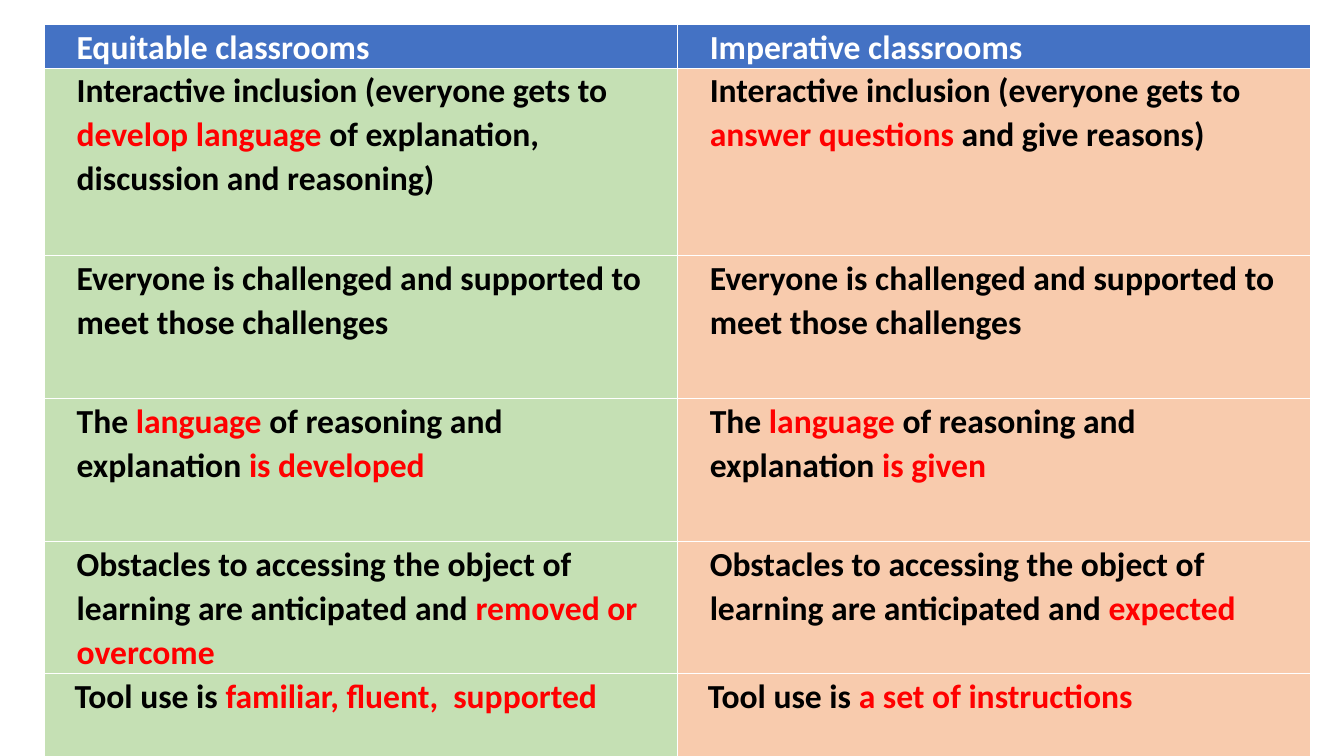
from pptx import Presentation
from pptx.dml.color import RGBColor
from pptx.enum.text import MSO_ANCHOR
from pptx.util import Inches, Pt

HEADINGS = ("Equitable classrooms", "Imperative classrooms")
COMPARISONS = [
    ("Interactive inclusion (everyone gets to *develop language* of explanation, discussion and reasoning)",
     "Interactive inclusion (everyone gets to *answer questions* and give reasons)"),
    ("Everyone is challenged and supported to meet those challenges",
     "Everyone is challenged and supported to meet those challenges"),
    ("The *language* of reasoning and explanation *is developed*",
     "The *language* of reasoning and explanation *is given*"),
    ("Obstacles to accessing the object of learning are anticipated and *removed or overcome*",
     "Obstacles to accessing the object of learning are anticipated and *expected*"),
    ("Tool use is *familiar, fluent,  supported*",
     "Tool use is *a set of instructions*"),
]
ROW_HEIGHTS = (0.42, 1.86, 1.42, 1.42, 1.31, 0.84)
COLUMN_WIDTH = 6.28
LEFT, TOP = 0.44, 0.24
INDENT, LAST_INDENT = 0.25, 0.23

WHITE = RGBColor(0xFF, 0xFF, 0xFF)
BLACK = RGBColor(0x00, 0x00, 0x00)
RED = RGBColor(0xFF, 0x00, 0x00)
BLUE = RGBColor(0x44, 0x72, 0xC4)
GREEN = RGBColor(0xC5, 0xE0, 0xB4)
ORANGE = RGBColor(0xF8, 0xCB, 0xAD)


def write_cell(cell, text, *, fill, color=BLACK, anchor=MSO_ANCHOR.TOP, indent=INDENT):
    cell.fill.solid()
    cell.fill.fore_color.rgb = fill
    cell.vertical_anchor = anchor
    cell.margin_left = Inches(0.07 + indent)
    cell.margin_right = Inches(0.07)
    cell.margin_top = cell.margin_bottom = 0
    paragraph = cell.text_frame.paragraphs[0]
    paragraph.line_spacing = 1.07
    paragraph.space_after = Pt(8)
    for index, part in enumerate(text.split("*")):
        if part:
            run = paragraph.add_run()
            run.text = part
            run.font.name = "Calibri"
            run.font.size = Pt(24)
            run.font.bold = True
            run.font.color.rgb = RED if index % 2 else color


def main():
    presentation = Presentation()
    presentation.slide_width = Inches(13.33)
    presentation.slide_height = Inches(7.5)
    slide = presentation.slides.add_slide(presentation.slide_layouts[6])

    table = slide.shapes.add_table(
        len(ROW_HEIGHTS), len(HEADINGS), Inches(LEFT), Inches(TOP),
        Inches(COLUMN_WIDTH * len(HEADINGS)), Inches(sum(ROW_HEIGHTS))).table
    table.horz_banding = False
    for column in table.columns:
        column.width = Inches(COLUMN_WIDTH)
    for row, height in zip(table.rows, ROW_HEIGHTS):
        row.height = Inches(height)

    for column, heading in enumerate(HEADINGS):
        write_cell(table.cell(0, column), heading, fill=BLUE, color=WHITE,
                   anchor=MSO_ANCHOR.MIDDLE)
    for row, comparison in enumerate(COMPARISONS, start=1):
        indent = LAST_INDENT if row == len(COMPARISONS) else INDENT
        for column, (text, fill) in enumerate(zip(comparison, (GREEN, ORANGE))):
            write_cell(table.cell(row, column), text, fill=fill, indent=indent)

    presentation.save("out.pptx")


if __name__ == "__main__":
    main()
